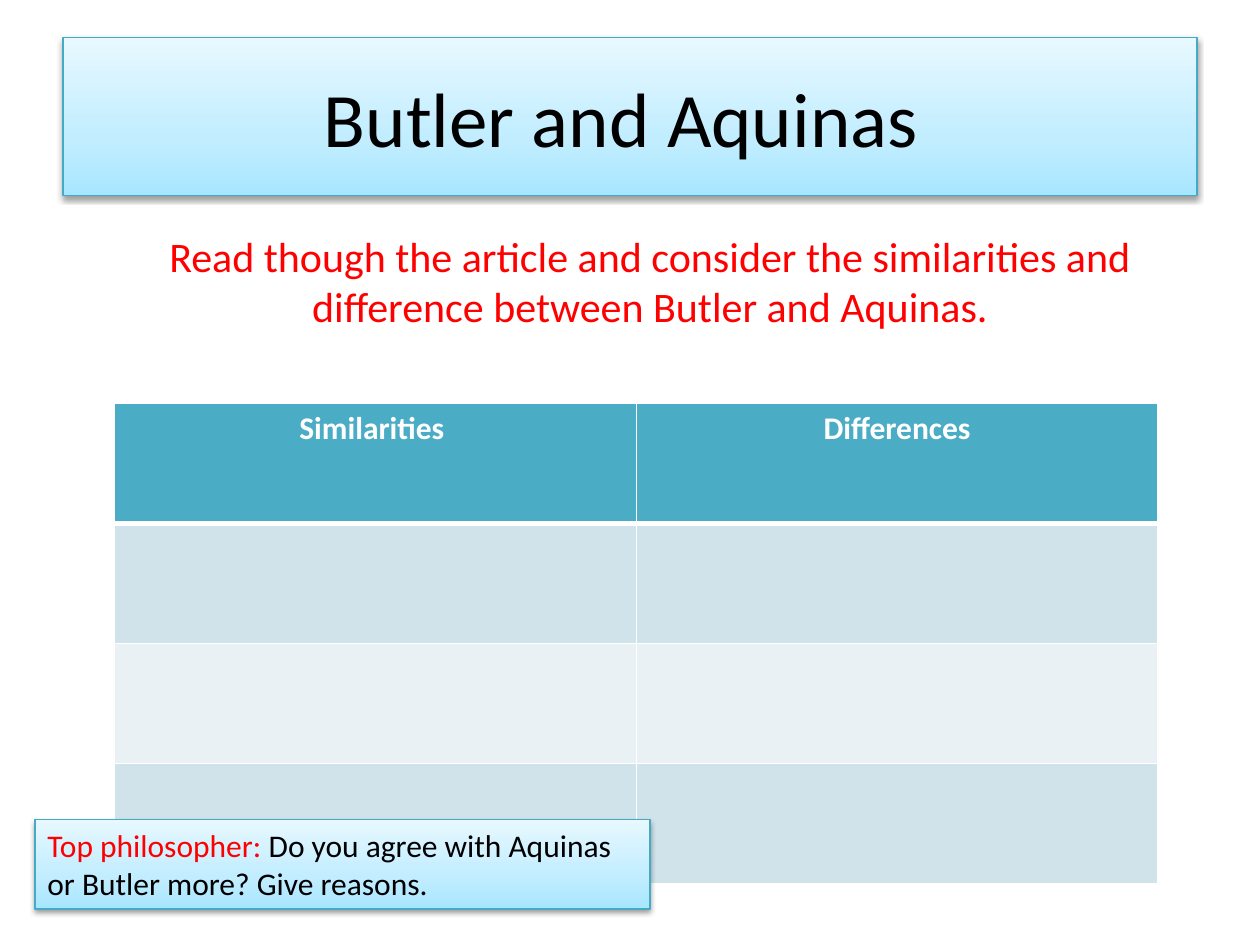
"""Build a slide comparing Butler and Aquinas with a table and two panels."""
from typing import NamedTuple

from lxml import etree
from pptx import Presentation
from pptx import util as u
from pptx.dml.color import RGBColor
from pptx.enum import text
from pptx.oxml import parse_xml
from pptx.oxml.ns import nsdecls, qn

BLACK = RGBColor(0x00, 0x00, 0x00)
WHITE = RGBColor(0xFF, 0xFF, 0xFF)
RED = RGBColor(0xFF, 0x00, 0x00)
PANEL_LINE = RGBColor(0x46, 0xAA, 0xC5)
HEADER_FILL = RGBColor(0x4B, 0xAC, 0xC6)
BAND_FILLS = (RGBColor(0xE9, 0xF1, 0xF5), RGBColor(0xD0, 0xE3, 0xEA))
PANEL_STOPS = (
    (0, RGBColor(0xA7, 0xE6, 0xFF)),
    (35, RGBColor(0xC1, 0xED, 0xFF)),
    (100, RGBColor(0xE7, 0xF8, 0xFF)),
)
FONT = "Calibri"
HEADINGS = ("Similarities ", "Differences")
ROW_COUNT = 4
CENTER = text.PP_ALIGN.CENTER


class Box(NamedTuple):
    left: float
    top: float
    width: float
    height: float


class Words(NamedTuple):
    content: str
    size: float
    color: RGBColor
    bold: bool = False


TITLE_BOX = Box(36, 21.6, 648, 90)
TASK_BOX = Box(54, 128.2, 635, 65.4)
TABLE_BOX = Box(65.5, 230.4, 596.2, 274.4)
QUESTION_BOX = Box(20, 468.4, 351.4, 51)


def apply_format(target, values: dict) -> None:
    """Set every attribute named in the dict on the target."""
    for name, value in values.items():
        setattr(target, name, value)


def place(shape, box: Box) -> None:
    """Move and size a shape in points."""
    apply_format(shape, {name: u.Pt(value) for name, value in box._asdict().items()})


def write(text_frame, words: list[Words], alignment=None) -> None:
    """Write one paragraph of formatted runs."""
    paragraph = text_frame.paragraphs[0]
    paragraph.alignment = alignment
    for item in words:
        run = paragraph.add_run()
        run.text = item.content
        apply_format(run.font, {"name": FONT, "size": u.Pt(item.size), "bold": item.bold})
        run.font.color.rgb = item.color


def style_panel(shape) -> None:
    """Give a shape the blue gradient, thin outline and soft shadow."""
    shape.fill.gradient()
    shape.fill.gradient_angle = 90
    properties = shape._element.spPr
    stop_list = properties.find(f".//{qn('a:gsLst')}")
    for stop in list(stop_list):
        stop_list.remove(stop)
    for position, color in PANEL_STOPS:
        stop = etree.SubElement(stop_list, qn("a:gs"), pos=str(position * 1000))
        etree.SubElement(stop, qn("a:srgbClr"), val=str(color))
    shape.line.color.rgb = PANEL_LINE
    shape.line.width = u.Pt(0.75)
    properties.append(parse_xml(
        f'<a:effectLst {nsdecls("a")}><a:outerShdw blurRad="{u.Pt(3.1)}" dist="{u.Pt(1.6)}" '
        'dir="5400000" rotWithShape="0"><a:srgbClr val="000000"><a:alpha val="38000"/>'
        '</a:srgbClr></a:outerShdw></a:effectLst>'))


def add_text(slide, box: Box, words: list[Words], alignment=None):
    """Add a wrapping text box that grows with its text."""
    shape = slide.shapes.add_textbox(*(u.Pt(value) for value in box))
    apply_format(shape.text_frame, {
        "word_wrap": True, "auto_size": text.MSO_AUTO_SIZE.SHAPE_TO_FIT_TEXT})
    write(shape.text_frame, words, alignment)
    return shape


def style_cell(cell, row_index: int) -> None:
    """Draw white borders and the header or band fill of a cell."""
    properties = cell._tc.get_or_add_tcPr()
    widths = {
        "lnL": 1, "lnR": 1,
        "lnT": 3 if row_index == 1 else 1,
        "lnB": 3 if row_index == 0 else 1,
    }
    for side, width in widths.items():
        properties.append(parse_xml(
            f'<a:{side} {nsdecls("a")} w="{u.Pt(width)}"><a:solidFill>'
            f'<a:srgbClr val="{WHITE}"/></a:solidFill></a:{side}>'))
    cell.fill.solid()
    cell.fill.fore_color.rgb = BAND_FILLS[row_index % 2] if row_index else HEADER_FILL


def add_comparison(slide, box: Box) -> None:
    """Add the table with headings and empty rows to fill in."""
    table = slide.shapes.add_table(
        ROW_COUNT, len(HEADINGS), *(u.Pt(value) for value in box)).table
    for row_index, row in enumerate(table.rows):
        row.height = u.Pt(box.height / ROW_COUNT)
        for cell in row.cells:
            style_cell(cell, row_index)
    for cell, heading in zip(table.rows[0].cells, HEADINGS):
        write(cell.text_frame, [Words(heading, 18, WHITE, True)], CENTER)


def main() -> None:
    """Build and save the presentation."""
    presentation = Presentation()
    apply_format(presentation, {"slide_width": u.Pt(720), "slide_height": u.Pt(540)})
    slide = presentation.slides.add_slide(presentation.slide_layouts[5])

    title = slide.shapes.title
    place(title, TITLE_BOX)
    style_panel(title)
    title.text_frame.vertical_anchor = text.MSO_ANCHOR.MIDDLE
    write(title.text_frame, [Words("Butler and Aquinas ", 44, BLACK)], CENTER)

    add_comparison(slide, TABLE_BOX)
    add_text(slide, TASK_BOX, [Words(
        "Read though the article and consider the similarities and "
        "difference between Butler and Aquinas.", 24, RED)], CENTER)
    question = add_text(slide, QUESTION_BOX, [
        Words("Top philosopher: ", 18, RED),
        Words("Do you agree with Aquinas or Butler more? Give reasons.", 18, BLACK),
    ])
    style_panel(question)
    presentation.save("out.pptx")


if __name__ == "__main__":
    main()
